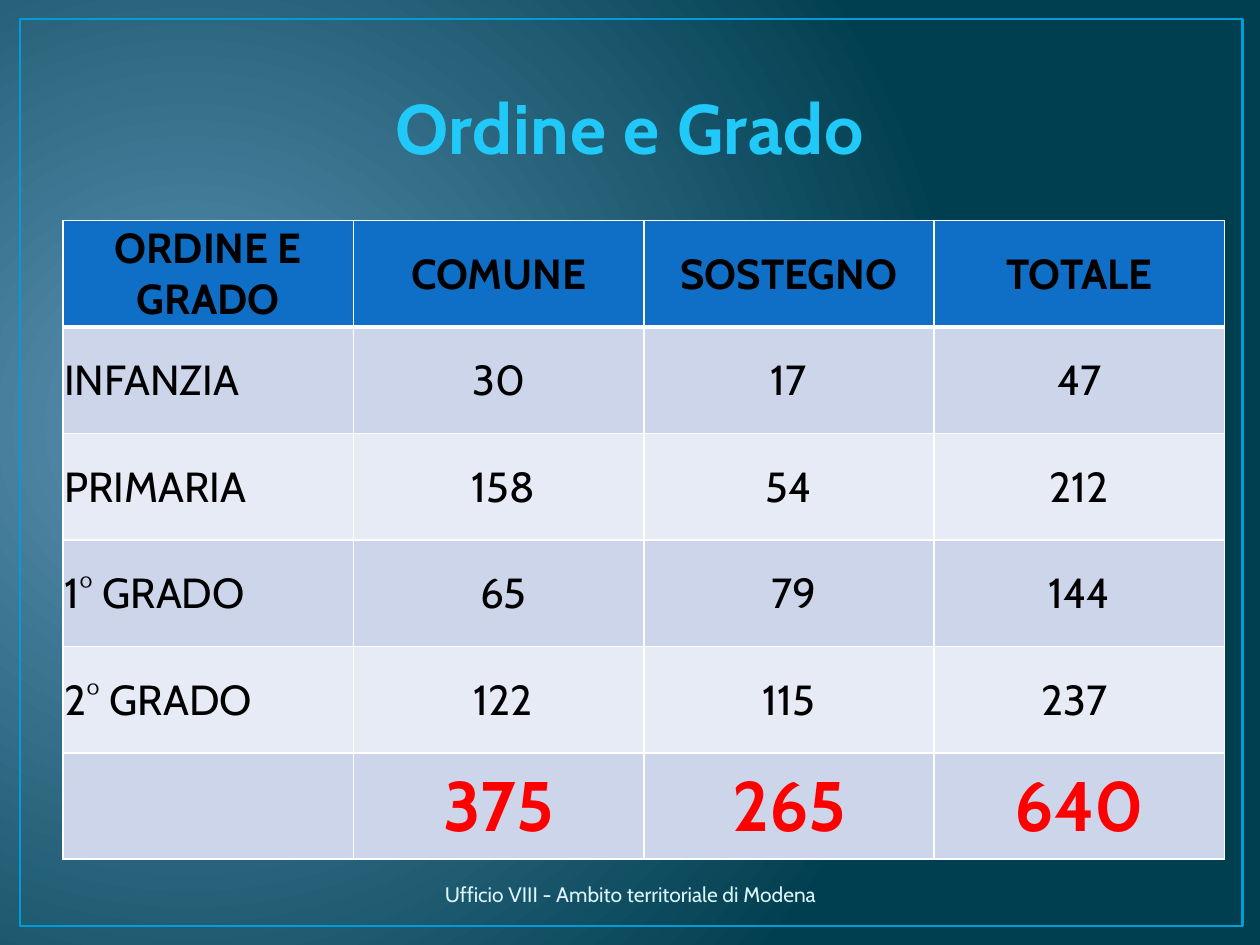
from dataclasses import dataclass

from lxml.etree import SubElement
from pptx import Presentation
from pptx.dml.color import RGBColor
from pptx.enum.shapes import MSO_SHAPE
from pptx.enum.text import MSO_ANCHOR, PP_ALIGN
from pptx.oxml import parse_xml
from pptx.oxml.ns import nsdecls, qn
from pptx.util import Inches, Pt

FONT = "Cabin"
GLOW, DEEP = RGBColor(0x5C, 0x92, 0xB3), RGBColor(0x00, 0x3F, 0x50)
FRAME = RGBColor(0x00, 0x9D, 0xD9)
TITLE, TITLE_EDGE = RGBColor(0x20, 0xC9, 0xF8), RGBColor(0x08, 0x37, 0x63)
FOOTER = RGBColor(0xDB, 0xF5, 0xF9)
HEADER = RGBColor(0x0F, 0x6F, 0xC6)
BAND_DARK, BAND_LIGHT = RGBColor(0xCC, 0xD5, 0xEA), RGBColor(0xE7, 0xEB, 0xF5)
BLACK, WHITE, RED = RGBColor(0, 0, 0), RGBColor(255, 255, 255), RGBColor(255, 0, 0)


@dataclass(frozen=True)
class TextStyle:
    size: float
    color: RGBColor
    bold: bool = False


@dataclass(frozen=True)
class TableRow:
    values: tuple[str, ...]
    fill: RGBColor
    style: TextStyle
    label_align: PP_ALIGN = PP_ALIGN.LEFT
    top: float = 1
    bottom: float = 1


HEADING = TextStyle(24, BLACK, True)
BODY = TextStyle(24, BLACK)
TOTAL = TextStyle(40, RED, True)

ROWS = (
    TableRow(("ORDINE E GRADO", "COMUNE", "SOSTEGNO", "TOTALE"), HEADER, HEADING,
             label_align=PP_ALIGN.CENTER, bottom=3),
    TableRow(("INFANZIA", "30", "17", "47"), BAND_DARK, BODY, top=3),
    TableRow(("PRIMARIA", " 158", "54", "212"), BAND_LIGHT, BODY),
    TableRow(("1° GRADO", " 65", " 79", "144"), BAND_DARK, BODY),
    TableRow(("2° GRADO", " 122", "115", "237 "), BAND_LIGHT, BODY),
    TableRow(("", "375", "265", "640"), BAND_DARK, TOTAL),
)


def write(text_frame, text: str, style: TextStyle, align=PP_ALIGN.CENTER):
    paragraph = text_frame.paragraphs[0]
    paragraph.alignment = align
    run = paragraph.add_run()
    run.text = text
    font_values = {"name": FONT, "size": Pt(style.size), "bold": style.bold}
    for name, value in font_values.items():
        setattr(run.font, name, value)
    run.font.color.rgb = style.color
    return run


def paint_background(slide) -> None:
    """Fill the slide with a circular gradient centred on the left."""
    fill = slide.background.fill
    fill.gradient()
    for stop, color, position in zip(fill.gradient_stops, (GLOW, DEEP), (0, 1)):
        stop.color.rgb = color
        stop.position = position
    gradient = slide.background._cSld.find(".//" + qn("a:gradFill"))
    gradient.replace(gradient.find(qn("a:lin")), parse_xml(
        f'<a:path {nsdecls("a")} path="circle">'
        '<a:fillToRect l="15000" t="50000" r="85000" b="60000"/></a:path>'))


def add_frame(slide) -> None:
    frame = slide.shapes.add_shape(MSO_SHAPE.RECTANGLE, Inches(0.16), Inches(0.15),
                                   Inches(9.7), Inches(7.2))
    frame.shadow.inherit = False
    frame.fill.background()
    frame.line.color.rgb = FRAME
    frame.line.width = Pt(1.5)


def add_title(slide) -> None:
    title = slide.shapes.title
    title.left, title.top = Inches(0.5), Inches(0.13)
    title.width, title.height = Inches(9), Inches(1.26)
    title.text_frame.vertical_anchor = MSO_ANCHOR.BOTTOM
    run = write(title.text_frame, "Ordine e Grado", TextStyle(40, TITLE, True))
    properties = run.font._element
    properties.set("spc", "50")
    properties.insert(0, parse_xml(
        f'<a:ln {nsdecls("a")} w="{Pt(1.05)}"><a:solidFill>'
        f'<a:srgbClr val="{TITLE_EDGE}"/></a:solidFill></a:ln>'))


def set_borders(cell, top: float, bottom: float) -> None:
    properties = cell._tc.get_or_add_tcPr()
    widths = {"lnL": 1, "lnR": 1, "lnT": top, "lnB": bottom}
    for index, (side, width) in enumerate(widths.items()):
        border = parse_xml(f'<a:{side} {nsdecls("a")} w="{Pt(width)}"/>')
        fill = SubElement(border, qn("a:solidFill"))
        SubElement(fill, qn("a:srgbClr"), val=str(WHITE))
        properties.insert(index, border)


def add_staff_table(slide, rows: tuple[TableRow, ...]) -> None:
    table = slide.shapes.add_table(len(rows), len(rows[0].values), Inches(0.5),
                                   Inches(1.75), Inches(9.22), Inches(5.07)).table
    cell_values = {
        "margin_left": Inches(0.01), "margin_right": Inches(0.01),
        "margin_top": Inches(0.01), "margin_bottom": 0,
        "vertical_anchor": MSO_ANCHOR.MIDDLE,
    }
    for row_index, row in enumerate(rows):
        for column, text in enumerate(row.values):
            cell = table.cell(row_index, column)
            for name, value in cell_values.items():
                setattr(cell, name, value)
            cell.fill.solid()
            cell.fill.fore_color.rgb = row.fill
            set_borders(cell, row.top, row.bottom)
            if text:
                align = PP_ALIGN.CENTER if column else row.label_align
                write(cell.text_frame, text, row.style, align)


def add_footer(slide) -> None:
    footer = slide.shapes.add_textbox(Inches(3.1), Inches(6.9), Inches(3.81), Inches(0.4))
    footer.text_frame.word_wrap = True
    footer.text_frame.vertical_anchor = MSO_ANCHOR.MIDDLE
    write(footer.text_frame, "Ufficio VIII - Ambito territoriale di Modena",
          TextStyle(12, FOOTER))


def main() -> None:
    presentation = Presentation()
    presentation.slide_width, presentation.slide_height = Inches(10), Inches(7.5)
    slide = presentation.slides.add_slide(presentation.slide_layouts[5])
    paint_background(slide)
    add_frame(slide)
    add_title(slide)
    add_staff_table(slide, ROWS)
    add_footer(slide)
    presentation.save("out.pptx")


if __name__ == "__main__":
    main()
